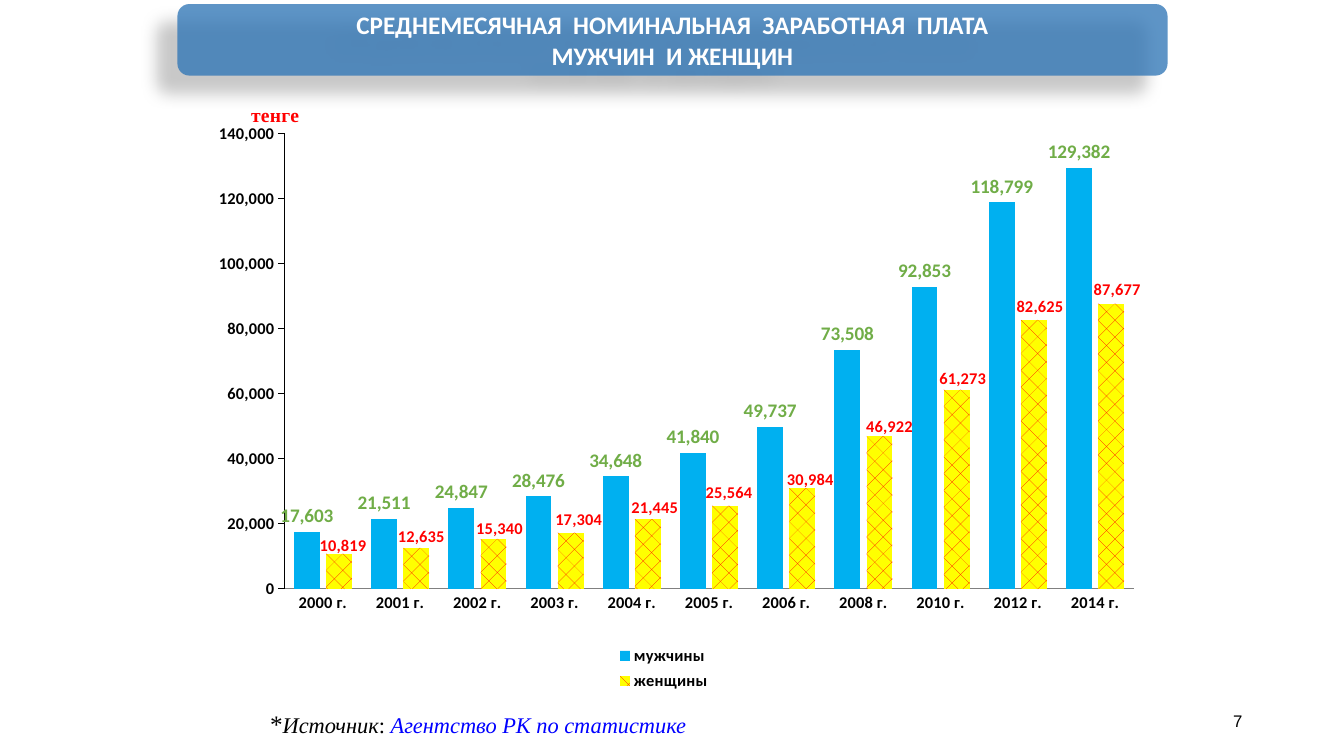
"""Builds the slide on average monthly pay of men and women."""
import pptx
import pptx.chart.data
import pptx.dml.color
import pptx.enum.chart
import pptx.enum.dml
import pptx.enum.shapes
import pptx.enum.text
import pptx.oxml
import pptx.oxml.ns
import pptx.util
from pptx.util import Inches

TITLE = ["СРЕДНЕМЕСЯЧНАЯ  НОМИНАЛЬНАЯ  ЗАРАБОТНАЯ  ПЛАТА", "МУЖЧИН  И ЖЕНЩИН"]
UNIT = "тенге"
PAGE_NUMBER = "7"
YEARS = [2000, 2001, 2002, 2003, 2004, 2005, 2006, 2008, 2010, 2012, 2014]
MEN = ("мужчины", [17603, 21511, 24847, 28476, 34648, 41840, 49737, 73508, 92853, 118799, 129382])
WOMEN = ("женщины", [10819, 12635, 15340, 17304, 21445, 25564, 30984, 46922, 61273, 82625, 87677])
WOMEN_LABEL_SHIFTS = [
    (0.04, 0.06), (0.05, 0.03), (0.06, 0.04), (0.08, 0.01), (0.07, 0.02), (0.04, 0.01),
    (0.08, 0.06), (0.1, 0.04), (0.06, 0.03), (0.06, 0.01), (0.06, 0),
]
THEME = {
    "serif": "Times New Roman", "sans": "Calibri", "page": "Arial",
    "black": "000000", "white": "FFFFFF", "banner": "2E75B6", "men": "00B0F0",
    "women": "FFFF00", "red": "FF0000", "green": "70AD47", "blue": "0000FF", "axis": "808080",
    "title_size": 18, "source_size": 16, "unit_size": 14, "men_label_size": 13.7,
    "chart_size": 11.7, "page_size": 12,
}
SOURCE = [
    ("*", "title_size", "black", False),
    ("Источник", "source_size", "black", True),
    (": ", "source_size", "black", False),
    ("Агентство РК по статистике", "source_size", "blue", True),
]
CHART_BOX = (1.67, 0.92, 9.83, 6.11)
NUMBER_FORMAT = "#,##0"


def colour(name):
    return pptx.dml.color.RGBColor.from_string(THEME[name])


def style(font, face, size, shade, bold=False, italic=False):
    font.name, font.size = THEME[face], pptx.util.Pt(THEME[size])
    font.color.rgb = colour(shade)
    font.bold, font.italic = bold, italic


def add_text(slide, box, anchor=pptx.enum.text.MSO_ANCHOR.TOP):
    frame = slide.shapes.add_textbox(*map(Inches, box)).text_frame
    frame.word_wrap, frame.vertical_anchor = True, anchor
    return frame


def set_layout(parent, index, inner=False, edge=True, **fractions):
    """Give a chart part a manual layout."""
    for old in parent.findall(pptx.oxml.ns.qn("c:layout")):
        parent.remove(old)
    tags = [("layoutTarget", "inner")] if inner else []
    tags += [("xMode", "edge"), ("yMode", "edge")] if edge else []
    tags += fractions.items()
    body = "".join(f'<c:{tag} val="{value}"/>' for tag, value in tags)
    parent.insert(index, pptx.oxml.parse_xml(
        f'<c:layout {pptx.oxml.ns.nsdecls("c")}><c:manualLayout>{body}</c:manualLayout></c:layout>'))


def add_banner(slide):
    banner = slide.shapes.add_shape(
        pptx.enum.shapes.MSO_SHAPE.ROUNDED_RECTANGLE, *map(Inches, (1.76, 0.04, 9.82, 0.71)))
    banner.shadow.inherit = False
    banner.fill.solid()
    banner.fill.fore_color.rgb = colour("banner")
    banner.line.fill.background()
    namespace = pptx.oxml.ns.nsdecls("a")
    fill_colour = banner._element.spPr.find(".//" + pptx.oxml.ns.qn("a:srgbClr"))
    fill_colour.append(pptx.oxml.parse_xml(f'<a:alpha {namespace} val="77000"/>'))
    effects = banner._element.spPr.find(pptx.oxml.ns.qn("a:effectLst"))
    effects.append(pptx.oxml.parse_xml(
        f'<a:outerShdw {namespace} blurRad="149860" dist="250190" dir="8460000" rotWithShape="0">'
        f'<a:srgbClr val="{THEME["black"]}"><a:alpha val="28000"/></a:srgbClr></a:outerShdw>'))
    frame = banner.text_frame
    frame.text = "\n".join(TITLE)
    frame.vertical_anchor = pptx.enum.text.MSO_ANCHOR.MIDDLE
    for para in frame.paragraphs:
        para.alignment = pptx.enum.text.PP_ALIGN.CENTER
        style(para.runs[0].font, "sans", "title_size", "white", bold=True)


def format_axes(chart):
    marks = pptx.enum.chart.XL_TICK_MARK
    years, pay = chart.category_axis, chart.value_axis
    years.major_tick_mark = marks.NONE
    years.format.line.color.rgb = colour("axis")
    pay.major_tick_mark = marks.OUTSIDE
    pay.has_major_gridlines = False
    pay.minimum_scale, pay.maximum_scale, pay.major_unit = 0, 140000, 20000
    pay.tick_labels.number_format = NUMBER_FORMAT
    pay.tick_labels.number_format_is_linked = False
    pay.format.line.color.rgb = colour("black")
    pay.format.line.width = pptx.util.Pt(0.73)
    frame = pay.axis_title.text_frame
    frame.text = UNIT
    style(frame.paragraphs[0].runs[0].font, "serif", "unit_size", "red", bold=True)
    frame._txBody.bodyPr.set("rot", "0")
    frame._txBody.bodyPr.set("vert", "horz")
    set_layout(pay.axis_title._element, 1, x=0.08, y=0.01)


def format_series(plot):
    men, women = plot.series
    men.format.fill.solid()
    men.format.fill.fore_color.rgb = colour("men")
    pattern = women.format.fill
    pattern.patterned()
    pattern.pattern = pptx.enum.dml.MSO_PATTERN.DIAGONAL_BRICK
    pattern.fore_color.rgb, pattern.back_color.rgb = colour("red"), colour("women")
    outside = pptx.enum.chart.XL_LABEL_POSITION.OUTSIDE_END
    for series, size, shade in ((men, "men_label_size", "green"), (women, "chart_size", "red")):
        series.invert_if_negative = False
        labels = series.data_labels
        labels.show_value, labels.position = True, outside
        labels.number_format, labels.number_format_is_linked = NUMBER_FORMAT, False
        style(labels.font, "sans", size, shade, bold=True)
    for index in range(len(YEARS)):
        label = women.points[index].data_label
        style(label.font, "sans", "chart_size", "red", bold=True)
        label.position = outside
    nodes = women.data_labels._element.findall(pptx.oxml.ns.qn("c:dLbl"))
    for node, (right, down) in zip(nodes, WOMEN_LABEL_SHIFTS):
        set_layout(node, 1, edge=False, x=right / CHART_BOX[2], y=down / CHART_BOX[3])


def add_pay_chart(slide):
    data = pptx.chart.data.CategoryChartData(number_format=NUMBER_FORMAT)
    data.categories = [f"{year} г." for year in YEARS]
    for name, values in (MEN, WOMEN):
        data.add_series(name, values)
    chart = slide.shapes.add_chart(
        pptx.enum.chart.XL_CHART_TYPE.COLUMN_CLUSTERED, *map(Inches, CHART_BOX), data).chart
    chart.has_title = False
    style(chart.font, "sans", "chart_size", "black", bold=True)
    plot = chart.plots[0]
    plot.gap_width, plot.overlap, plot.vary_by_categories = 75, -25, False
    set_layout(plot._element.getparent(), 0, inner=True, x=0.117, y=0.066, w=0.857, h=0.74)
    format_axes(chart)
    format_series(plot)
    chart.has_legend = True
    chart.legend.position = pptx.enum.chart.XL_LEGEND_POSITION.BOTTOM
    chart.legend.include_in_layout = False
    set_layout(chart.legend._element, 1, x=0.45, y=0.89, w=0.1, h=0.09)


def main():
    deck = pptx.Presentation()
    deck.slide_width, deck.slide_height = Inches(13.33), Inches(7.5)
    slide = deck.slides.add_slide(deck.slide_layouts[6])

    page = add_text(slide, (9.42, 6.95, 3, 0.4), pptx.enum.text.MSO_ANCHOR.MIDDLE)
    page.text = PAGE_NUMBER
    page.paragraphs[0].alignment = pptx.enum.text.PP_ALIGN.RIGHT
    style(page.paragraphs[0].runs[0].font, "page", "page_size", "black")

    add_pay_chart(slide)

    source = add_text(slide, (2.58, 6.98, 5.25, 0.4)).paragraphs[0]
    for words, size, shade, italic in SOURCE:
        span = source.add_run()
        span.text = words
        style(span.font, "serif", size, shade, italic=italic)

    add_banner(slide)
    deck.save("out.pptx")


if __name__ == "__main__":
    main()
